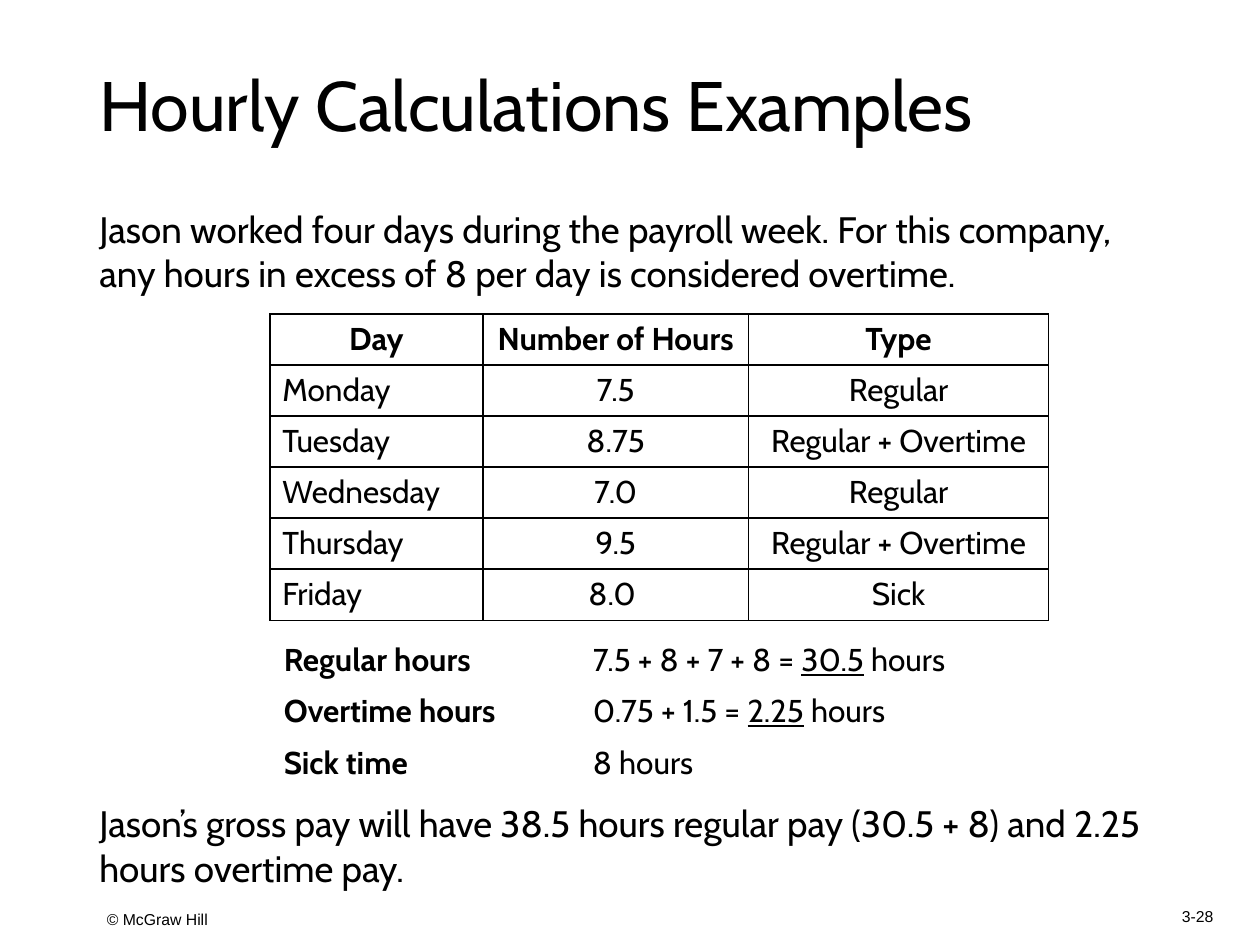
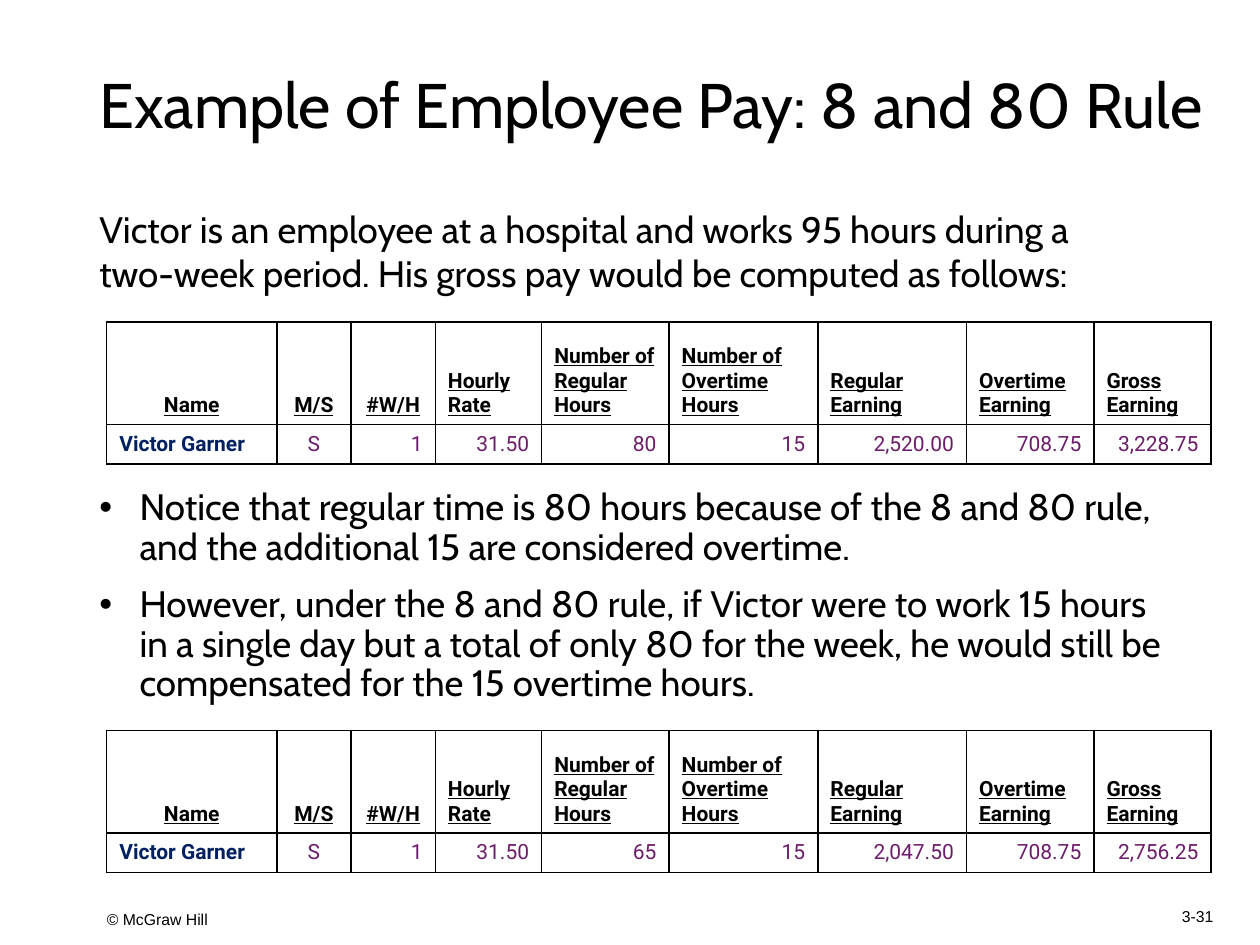
from dataclasses import dataclass, replace
from typing import Optional, Sequence

from lxml.etree import SubElement
from pptx import Presentation
from pptx.dml.color import RGBColor
from pptx.enum.text import MSO_ANCHOR as Anchor, PP_ALIGN as Align
from pptx.oxml.ns import qn
from pptx.util import Pt

COLORS = {"ink": "000000", "name": "002060", "value": "6D1D6B"}
LEFT = 49.7  # shared left edge of title and body text


@dataclass(frozen=True)
class Style:
    size: float
    font: str = "Cabin"
    color: str = "ink"
    bold: bool = False
    underline: bool = False
    align: Align = Align.LEFT
    anchor: Anchor = Anchor.TOP
    line: Optional[float] = None
    gap: float = 0
    bullet: bool = False


@dataclass(frozen=True)
class Box:
    left: float
    top: float
    width: float
    height: float


@dataclass(frozen=True)
class Cell:
    text: str
    style: Style


# Text styles
TITLE = Style(40, anchor=Anchor.MIDDLE, line=0.9)
BODY = Style(21)
BULLETS = Style(21, line=0.9, gap=10, bullet=True)
FOOTER = Style(9, "Arial", anchor=Anchor.MIDDLE)
DAY = Style(18)
DAY_CENTER = replace(DAY, align=Align.CENTER)
DAY_HEAD = replace(DAY_CENTER, bold=True)
DAY_LABEL = replace(DAY, bold=True)
PAY_HEAD = Style(12, "Roboto", bold=True, underline=True, anchor=Anchor.BOTTOM)
PAY_HEAD_CENTER = replace(PAY_HEAD, align=Align.CENTER)
PAY_NAME = Style(12, "Roboto", "name", bold=True, anchor=Anchor.MIDDLE)
PAY_VALUE = Style(12, "Roboto", "value", align=Align.RIGHT, anchor=Anchor.MIDDLE)
PAY_STATUS = replace(PAY_VALUE, align=Align.CENTER)


def write_text(frame, text: str, style: Style) -> None:
    """Write one paragraph per line; underscores enclose underlined words."""
    for index, line in enumerate(text.split("\n")):
        paragraph = frame.add_paragraph() if index else frame.paragraphs[0]
        if style.bullet:
            properties = paragraph._p.get_or_add_pPr()
            properties.set("marL", str(Pt(23)))
            properties.set("indent", str(-Pt(23)))
            SubElement(properties, qn("a:buFont"), typeface="Arial")
            SubElement(properties, qn("a:buChar"), char="•")
        paragraph.alignment = style.align
        if style.line:
            paragraph.line_spacing = style.line
        if index and style.gap:
            paragraph.space_before = Pt(style.gap)
        font = paragraph.font
        font.size, font.name = Pt(style.size), style.font
        font.bold, font.underline = style.bold, style.underline
        font.color.rgb = RGBColor.from_string(COLORS[style.color])
        for part, words in enumerate(line.split("_")):
            if words:
                run = paragraph.add_run()
                run.text = words
                if part % 2:
                    run.font.underline = True


def add_text(slide, box: Box, text: str, style: Style) -> None:
    frame = slide.shapes.add_textbox(
        Pt(box.left), Pt(box.top), Pt(box.width), Pt(box.height)).text_frame
    frame.word_wrap = True
    frame.vertical_anchor = style.anchor
    write_text(frame, text, style)


def set_borders(cell, ruled: bool) -> None:
    properties = cell._tc.get_or_add_tcPr()
    for side in ("lnL", "lnR", "lnT", "lnB"):
        border = SubElement(properties, qn(f"a:{side}"), w=str(Pt(1)))
        if ruled:
            fill = SubElement(border, qn("a:solidFill"))
            SubElement(fill, qn("a:srgbClr"), val=COLORS["ink"])
        else:
            SubElement(border, qn("a:noFill"))


def add_grid(slide, left: float, top: float, widths: Sequence[float],
             heights: Sequence[float], rows: Sequence[Sequence[Cell]],
             ruled: bool = True) -> None:
    grid = slide.shapes.add_table(
        len(heights), len(widths), Pt(left), Pt(top),
        Pt(sum(widths)), Pt(sum(heights))).table
    grid.first_row, grid.horz_banding = ruled, False
    for column, width in zip(grid.columns, widths):
        column.width = Pt(width)
    for row, height, contents in zip(grid.rows, heights, rows):
        row.height = Pt(height)
        for cell, content in zip(row.cells, contents):
            set_borders(cell, ruled)
            cell.fill.background()
            cell.vertical_anchor = content.style.anchor
            write_text(cell.text_frame, content.text, content.style)


def styled_row(texts: Sequence[str], styles: Sequence[Style]) -> list[Cell]:
    return [Cell(text, style) for text, style in zip(texts, styles)]


def start_slide(deck, title: str, number: str, title_style: Style = TITLE,
                title_width: float = 620.6):
    slide = deck.slides.add_slide(deck.slide_layouts[6])
    add_text(slide, Box(54, 514, 583, 22.3), "© McGraw Hill", FOOTER)
    add_text(slide, Box(654.5, 509.8, 59.8, 27.4), number,
             replace(FOOTER, align=Align.CENTER))
    add_text(slide, Box(LEFT, 28.8, title_width, 66.2), title, title_style)
    return slide


# Pay table, used twice on the second slide
PAY_WIDTHS = (97.2, 42.4, 48.2, 60.8, 72.8, 85, 85, 72.8, 67)
PAY_HEADS = ("Name", "M/S", "#W/H", "Hourly Rate", "Number of Regular Hours",
             "Number of Overtime\nHours", "Regular Earning",
             "Overtime Earning", "Gross Earning")


def add_pay_table(slide, top: float, hours: str, regular: str,
                  gross: str) -> None:
    values = ("Victor Garner", "S", "1", "31.50", hours, "15", regular,
              "708.75", gross)
    add_grid(slide, 61, top, PAY_WIDTHS, (58.5, 22.8), [
        styled_row(PAY_HEADS, [PAY_HEAD_CENTER] * 3 + [PAY_HEAD] * 6),
        styled_row(values, [PAY_NAME, PAY_STATUS] + [PAY_VALUE] * 7),
    ])


def build_hourly_slide(deck) -> None:
    slide = start_slide(deck, "Hourly Calculations Examples", "3-28")
    add_text(slide, Box(LEFT, 114.5, 620.6, 56.9),
             "Jason worked four days during the payroll week. For this company, "
             "any hours in excess of 8 per day is considered overtime.", BODY)

    # Hours by day
    days = (
        ("Monday", "7.5", "Regular"),
        ("Tuesday", "8.75", "Regular + Overtime"),
        ("Wednesday", "7.0", "Regular"),
        ("Thursday", "9.5", "Regular + Overtime"),
        ("Friday", "8.0 ", "Sick"),
    )
    rows = [styled_row(("Day", "Number of Hours", "Type"), [DAY_HEAD] * 3)]
    rows += [styled_row(day, (DAY, DAY_CENTER, DAY_CENTER)) for day in days]
    add_grid(slide, 154.2, 179.3, (121.7, 151.9, 171.4), [29.2] * 6, rows)

    # Totals by kind of hours
    totals = (
        ("Regular hours", "7.5 + 8 + 7 + 8 = _30.5_ hours"),
        ("Overtime hours", "0.75 + 1.5 = _2.25_ hours"),
        ("Sick time", "8 hours"),
    )
    add_grid(slide, 155, 362.9, (176.6, 262.4), [29.2] * 3,
             [styled_row(total, (DAY_LABEL, DAY)) for total in totals],
             ruled=False)

    add_text(slide, Box(LEFT, 454.3, 620.6, 57.6),
             "Jason’s gross pay will have 38.5 hours regular pay (30.5 + 8) "
             "and 2.25 hours overtime pay.", BODY)


def build_rule_slide(deck) -> None:
    slide = start_slide(deck, "Example of Employee Pay: 8 and 80 Rule", "3-31",
                        replace(TITLE, size=36), 654.5)
    add_text(slide, Box(LEFT, 114.5, 592.6, 59),
             "Victor is an employee at a hospital and works 95 hours during a "
             "two-week period. His gross pay would be computed as follows:",
             BODY)
    add_pay_table(slide, 184, "80", "2,520.00", "3,228.75")
    add_text(slide, Box(LEFT, 275.8, 621.4, 130.3),
             "Notice that regular time is 80 hours because of the 8 and 80 "
             "rule, and the additional 15 are considered overtime.\n"
             "However, under the 8 and 80 rule, if Victor were to work 15 "
             "hours in a single day but a total of only 80 for the week, he "
             "would still be compensated for the 15 overtime hours.", BULLETS)
    add_pay_table(slide, 417.4, "65", "2,047.50", "2,756.25")


def main() -> None:
    deck = Presentation()
    deck.slide_width, deck.slide_height = Pt(720), Pt(540)
    build_hourly_slide(deck)
    build_rule_slide(deck)
    deck.save("out.pptx")


if __name__ == "__main__":
    main()
